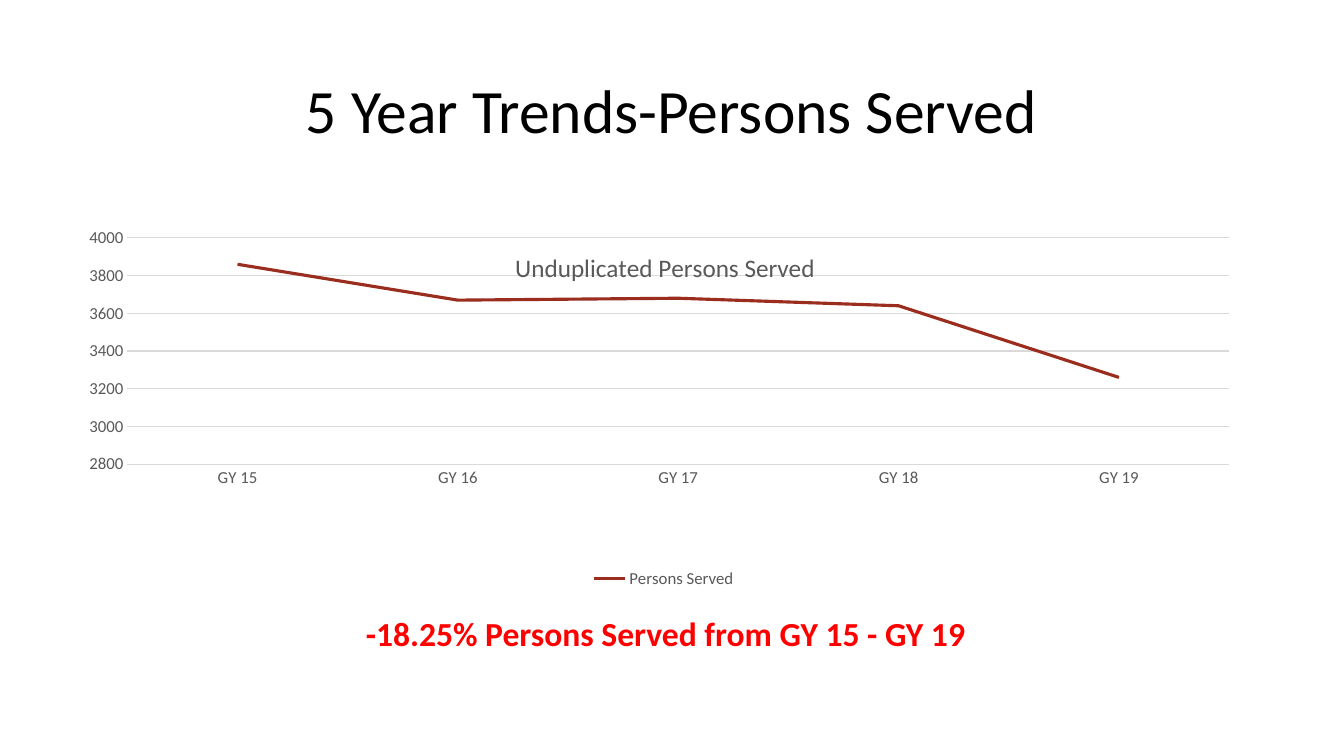
from lxml.etree import SubElement
from pptx import Presentation
from pptx.chart.data import CategoryChartData
from pptx.dml.color import RGBColor
from pptx.enum.chart import XL_CHART_TYPE, XL_LEGEND_POSITION, XL_TICK_MARK
from pptx.enum.text import MSO_ANCHOR, PP_ALIGN
from pptx.oxml.ns import qn
from pptx.util import Pt

GREY, GRID, BRICK = "595959", "D9D9D9", "9B2D1F"


def rgb(value):
    return RGBColor.from_string(value)


def set_layout(parent, before, **values):
    """Place a chart part by fractions of the chart area."""
    for old in parent.findall(qn("c:layout")):
        parent.remove(old)
    layout = SubElement(parent, qn("c:layout"))
    manual = SubElement(layout, qn("c:manualLayout"))
    for name, value in values.items():
        SubElement(manual, qn(f"c:{name}")).set("val", str(value))
    parent.find(qn(before)).addprevious(layout)


class Deck:
    font = "Calibri"

    def __init__(self, width, height):
        self.prs = Presentation()
        self.prs.slide_width, self.prs.slide_height = Pt(width), Pt(height)
        self.s = self.prs.slides.add_slide(self.prs.slide_layouts[5])

    def style(self, font, size, color, bold=False):
        formats = {"name": self.font, "size": Pt(size), "bold": bold}
        for name, value in formats.items():
            setattr(font, name, value)
        font.color.rgb = rgb(color)

    def add_run(self, tf, text, size, color, bold=False, **paragraph):
        p = tf.paragraphs[0]
        for name, value in paragraph.items():
            setattr(p, name, value)
        r = p.add_run()
        r.text = text
        self.style(r.font, size, color, bold)

    def title(self, text, left, top, width, height):
        sp = self.s.shapes.title
        box = {"left": left, "top": top, "width": width, "height": height}
        for name, value in box.items():
            setattr(sp, name, Pt(value))
        sp.text_frame.vertical_anchor = MSO_ANCHOR.MIDDLE
        self.add_run(sp.text_frame, text, 44, "000000",
                     alignment=PP_ALIGN.CENTER, line_spacing=0.9)

    def text(self, text, *box, size, color, bold=False):
        tf = self.s.shapes.add_textbox(*map(Pt, box)).text_frame
        tf.word_wrap = True
        self.add_run(tf, text, size, color, bold)

    def line_chart(self, title, series_name, points, *box):
        data = CategoryChartData()
        data.categories = list(points)
        data.add_series(series_name, list(points.values()))
        chart = self.s.shapes.add_chart(
            XL_CHART_TYPE.LINE, *map(Pt, box), data).chart
        self.style(chart.font, 12, GREY)

        self.add_run(chart.chart_title.text_frame, title, 18, GREY)
        heading = chart.chart_title.text_frame._txBody.getparent().getparent()
        for old in heading.findall(qn("c:overlay")):
            heading.remove(old)
        SubElement(heading, qn("c:overlay")).set("val", "1")
        set_layout(heading, "c:overlay", xMode="edge", yMode="edge", x=0.37, y=0.05)
        plot_area = chart.plots[0]._element.getparent()
        set_layout(plot_area, "c:lineChart", layoutTarget="inner", xMode="edge",
                   yMode="edge", x=0.044, y=0.028, w=0.937, h=0.62)

        chart.has_legend = True
        chart.legend.position = XL_LEGEND_POSITION.BOTTOM
        chart.legend.include_in_layout = False
        self.style(chart.legend.font, 12, GREY)

        for axis in (chart.category_axis, chart.value_axis):
            axis.major_tick_mark = axis.minor_tick_mark = XL_TICK_MARK.NONE
            self.style(axis.tick_labels.font, 12, GREY)
        value_axis = chart.value_axis
        scale = {"minimum_scale": 2800, "maximum_scale": 4000, "major_unit": 200}
        for name, value in scale.items():
            setattr(value_axis, name, value)
        value_axis.format.line.fill.background()

        chart.plots[0].vary_by_categories = False
        series = chart.plots[0].series[0]
        series.smooth = False
        lines = [(chart.category_axis, GRID, 0.75),
                 (value_axis.major_gridlines, GRID, 0.75),
                 (series, BRICK, 2.25)]
        for part, color, width in lines:
            part.format.line.color.rgb = rgb(color)
            part.format.line.width = Pt(width)


def main():
    deck = Deck(960, 540)
    deck.title("5 Year Trends-Persons Served", 66, 28.75, 828, 104.4)
    served = {"GY 15": 3860, "GY 16": 3670, "GY 17": 3680,
              "GY 18": 3640, "GY 19": 3260}
    deck.line_chart("Unduplicated Persons Served", "Persons Served", served,
                    54, 162.7, 840, 260.6)
    deck.text("-18.25% Persons Served from GY 15 - GY 19", 254.2, 434.2, 451.4, 36,
              size=24, color="FF0000", bold=True)
    deck.prs.save("out.pptx")


if __name__ == "__main__":
    main()
